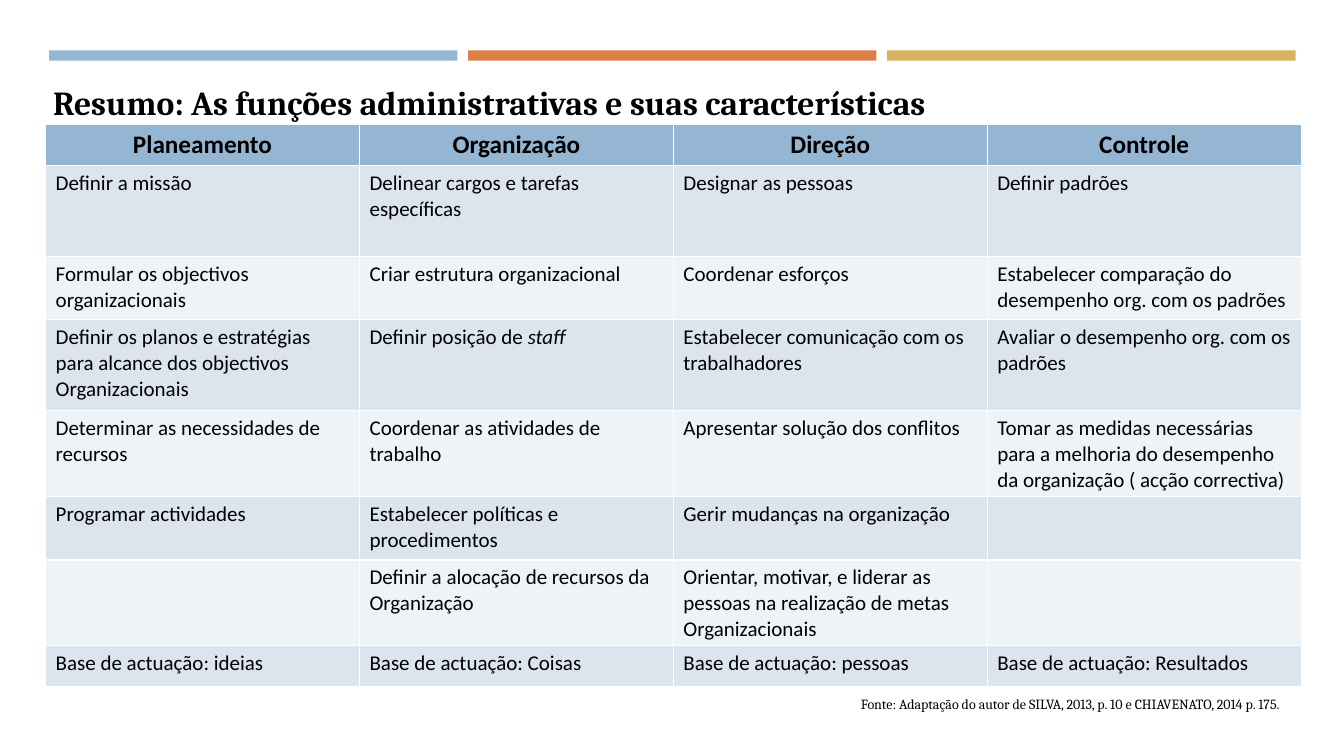
from pptx import Presentation
from pptx.dml.color import RGBColor
from pptx.enum.shapes import MSO_SHAPE
from pptx.enum.text import MSO_AUTO_SIZE, PP_ALIGN
from pptx.util import Cm, Pt

BLACK = RGBColor(0x00, 0x00, 0x00)
BLUE = RGBColor(0x94, 0xB6, 0xD2)
ORANGE = RGBColor(0xDD, 0x80, 0x47)
GOLD = RGBColor(0xD8, 0xB2, 0x5C)
PALE = RGBColor(0xDC, 0xE5, 0xEE)
LIGHT = RGBColor(0xEE, 0xF3, 0xF7)

ROWS = [
    (1.03, ["Planeamento", "Organização", "Direção", "Controle"]),
    (2.29, ["Definir a missão", "Delinear cargos e tarefas específicas",
            "Designar as pessoas", "Definir padrões"]),
    (1.6, ["Formular os objectivos organizacionais",
           "Criar estrutura organizacional", "Coordenar esforços",
           "Estabelecer comparação do desempenho org. com os padrões"]),
    (2.29, ["Definir os planos e estratégias para alcance dos objectivos Organizacionais",
            "Definir posição de ",
            "Estabelecer comunicação com os trabalhadores",
            "Avaliar o desempenho org. com os padrões"]),
    (2.16, ["Determinar as necessidades de recursos",
            "Coordenar as atividades de trabalho",
            "Apresentar solução dos conflitos",
            "Tomar as medidas necessárias para a melhoria do desempenho "
            "da organização ( acção correctiva)"]),
    (1.6, ["Programar actividades", "Estabelecer políticas e procedimentos",
           "Gerir mudanças na organização", ""]),
    (2.16, ["", "Definir a alocação de recursos da Organização",
            "Orientar, motivar, e liderar as pessoas na realização de metas Organizacionais",
            ""]),
    (1.03, ["Base de actuação: ideias", "Base de actuação: Coisas",
            "Base de actuação: pessoas", "Base de actuação: Resultados"]),
]


def style(para, face, size, bold=False):
    for run in para.runs:
        run.font.name = face
        run.font.size = Pt(size)
        run.font.bold = bold
        run.font.color.rgb = BLACK


def label(text, left, top, width, height, size, bold, align):
    box = slide.shapes.add_textbox(Cm(left), Cm(top), Cm(width), Cm(height))
    frame = box.text_frame
    frame.text = text
    frame.word_wrap = True
    frame.auto_size = MSO_AUTO_SIZE.SHAPE_TO_FIT_TEXT
    para = frame.paragraphs[0]
    para.alignment = align
    style(para, "Cambria", size, bold)


deck = Presentation()
deck.slide_width = Cm(33.87)
deck.slide_height = Cm(19.05)
slide = deck.slides.add_slide(deck.slide_layouts[6])

for i, color in enumerate([BLUE, ORANGE, GOLD]):
    bar = slide.shapes.add_shape(
        MSO_SHAPE.RECTANGLE, Cm(1.24 + 10.56 * i), Cm(1.27), Cm(10.29), Cm(0.26))
    bar.shadow.inherit = False
    bar.fill.solid()
    bar.fill.fore_color.rgb = color
    bar.line.fill.background()

label("Resumo: As funções administrativas e suas características",
      1.09, 1.93, 31.62, 1.28, 24, True, PP_ALIGN.LEFT)

table = slide.shapes.add_table(
    len(ROWS), 4, Cm(1.15), Cm(3.14), Cm(31.64), Cm(14.16)).table
for col in table.columns:
    col.width = Cm(7.91)

for r, (height, texts) in enumerate(ROWS):
    table.rows[r].height = Cm(height)
    for c, text in enumerate(texts):
        cell = table.cell(r, c)
        cell.fill.solid()
        cell.fill.fore_color.rgb = BLUE if r == 0 else PALE if r % 2 else LIGHT
        cell.text_frame.text = text
        para = cell.text_frame.paragraphs[0]
        if r == 0:
            para.alignment = PP_ALIGN.CENTER
        style(para, "Calibri", 15 if r else 18, r == 0)

para = table.cell(3, 1).text_frame.paragraphs[0]
staff = para.add_run()
staff.text = "staff"
style(para, "Calibri", 15)
staff.font.italic = True

label("Fonte: Adaptação do autor de SILVA, 2013, p. 10 e CHIAVENATO, 2014 p. 175.",
      20.17, 17.4, 12.32, 0.68, 10, False, PP_ALIGN.RIGHT)

deck.save("out.pptx")
